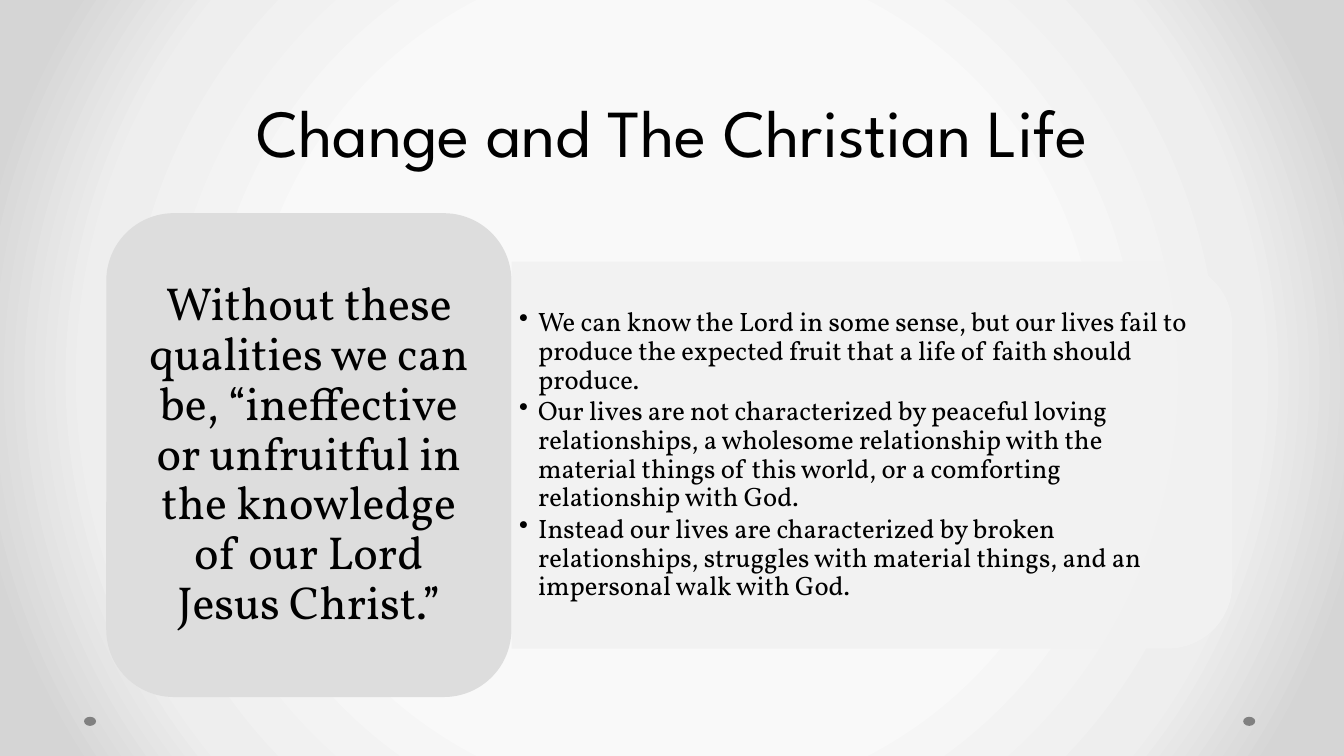
from pptx import Presentation
from pptx.enum import shapes, text
from pptx.oxml import parse_xml
from pptx.oxml.ns import nsdecls, qn
from pptx.dml.color import RGBColor
from pptx.util import Pt

COLORS = {
    "text": "000000",
    "dot": "808080",
    "card": "DDDDDD",
    "panel": "F2F2F2",
    "glow_center": "F9F9F9",
    "glow_middle": "EEEEEE",
    "glow_edge": "D5D5D5",
}
HEADING_FONT, BODY_FONT = "League Spartan", "Vollkorn"
WIDTH, HEIGHT = 960, 540

CONSEQUENCES = [
    "We can know the Lord in some sense, but our lives fail to produce the expected "
    "fruit that a life of faith should produce.",
    "Our lives are not characterized by peaceful loving relationships, a wholesome "
    "relationship with the material things of this world, or a comforting "
    "relationship with God.",
    "Instead our lives are characterized by broken relationships, struggles with "
    "material things, and an impersonal walk with God.",
]


class SlideBuilder:
    def __init__(self, slide):
        self.slide = slide

    def radial_background(self, stops):
        """Fill the background from the centre outwards; stops are (percent, colour)."""
        self.slide.background.fill.gradient()
        linear = self.slide.element.find(".//" + qn("a:gradFill"))
        stop_xml = "".join(
            f'<a:gs pos="{percent * 1000}"><a:srgbClr val="{COLORS[color]}"/></a:gs>'
            for percent, color in stops
        )
        radial = parse_xml(
            f'<a:gradFill {nsdecls("a")} rotWithShape="1"><a:gsLst>{stop_xml}</a:gsLst>'
            '<a:path path="circle"><a:fillToRect l="50000" t="50000" r="50000" b="50000"/>'
            "</a:path></a:gradFill>"
        )
        linear.getparent().replace(linear, radial)

    def shape(self, kind, left, top, width, height, color, opacity=100, rotation=0):
        shape = self.slide.shapes.add_shape(
            kind, Pt(left), Pt(top), Pt(width), Pt(height))
        shape.shadow.inherit = False
        shape.fill.solid()
        shape.fill.fore_color.rgb = RGBColor.from_string(COLORS[color])
        shape.line.fill.background()
        shape.rotation = rotation
        if opacity < 100:
            fill_color = shape.element.spPr.find(".//" + qn("a:srgbClr"))
            fill_color.append(
                parse_xml(f'<a:alpha {nsdecls("a")} val="{opacity * 1000}"/>'))
        return shape

    def text_box(self, left, top, width, height):
        return self.slide.shapes.add_textbox(Pt(left), Pt(top), Pt(width), Pt(height))

    def set_text(self, shape, lines, font, size, spacing, inset, anchor="MIDDLE",
                 align="CENTER", after=0, bullet_indent=0):
        frame = shape.text_frame
        frame.word_wrap = True
        frame.vertical_anchor = text.MSO_ANCHOR[anchor]
        frame.margin_left = frame.margin_right = Pt(inset)
        frame.margin_top = frame.margin_bottom = Pt(inset / 2)
        frame.text = "\n".join(lines)
        for paragraph in frame.paragraphs:
            paragraph.alignment = text.PP_ALIGN[align]
            paragraph.line_spacing = spacing
            paragraph.space_after = Pt(after)
            paragraph.font.name = font
            paragraph.font.size = Pt(size)
            paragraph.font.color.rgb = RGBColor.from_string(COLORS["text"])
            if bullet_indent:
                self.bullet(paragraph, bullet_indent)

    def bullet(self, paragraph, indent):
        properties = paragraph._p.get_or_add_pPr()
        properties.set("marL", str(Pt(indent)))
        properties.set("indent", str(-Pt(indent)))
        mark = parse_xml(f'<a:buChar {nsdecls("a")} char="•"/>')
        properties.find(qn("a:defRPr")).addprevious(mark)


def main():
    presentation = Presentation()
    presentation.slide_width, presentation.slide_height = Pt(WIDTH), Pt(HEIGHT)
    slide = presentation.slides.add_slide(presentation.slide_layouts[6])
    builder = SlideBuilder(slide)
    kinds = shapes.MSO_SHAPE

    builder.radial_background(
        [(50, "glow_center"), (76, "glow_middle"), (92, "glow_edge")])
    for dot_left in (60, 888):
        builder.shape(kinds.OVAL, dot_left, 512, 8.6, 6.5, "dot")

    title = builder.text_box(0, 0, WIDTH, 126)
    builder.set_text(title, ["Change and The Christian Life"], HEADING_FONT, 48,
                     Pt(48), 7.2, anchor="BOTTOM")

    builder.shape(kinds.ROUND_2_SAME_RECTANGLE, 484.6, 67.7, 276.5, 514.8,
                  "panel", opacity=90, rotation=90)
    consequences = builder.text_box(365, 200.2, 501, 249.8)
    builder.set_text(consequences, CONSEQUENCES, BODY_FONT, 19, 0.9, 5.8,
                     align="LEFT", after=2, bullet_indent=13.7)

    card = builder.shape(kinds.ROUNDED_RECTANGLE, 75.9, 152.3, 289.4, 345.6, "card")
    builder.set_text(
        card,
        ["Without these qualities we can be, “ineffective or unfruitful in the "
         "knowledge of our Lord Jesus Christ.”"],
        BODY_FONT, 33, 0.9, 10)

    presentation.save("out.pptx")


if __name__ == "__main__":
    main()
